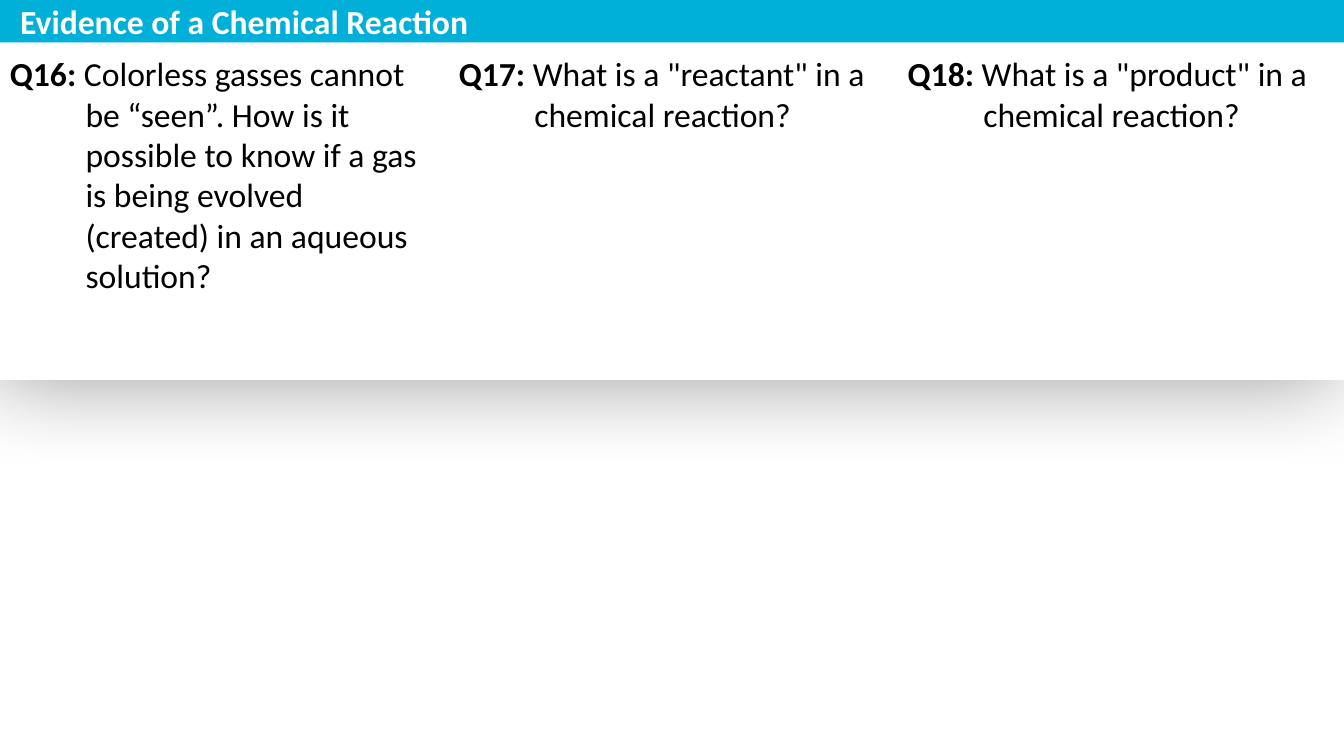
from dataclasses import dataclass

from lxml.etree import SubElement
from pptx import Presentation
from pptx.dml.color import RGBColor
from pptx.enum.shapes import MSO_SHAPE
from pptx.enum.text import MSO_ANCHOR, MSO_AUTO_SIZE, PP_ALIGN
from pptx.oxml.ns import qn
from pptx.util import Inches, Pt

WIDE, HIGH = 13.33, 7.38
PITCH = WIDE * 0.334  # distance between question columns
TOP = HIGH * 0.065    # top of the question row
BAR = 0.42            # height of the title bar


@dataclass(frozen=True)
class Theme:
    font: str = "Calibri"
    size: int = 24
    ink: str = "000000"
    paper: str = "FFFFFF"
    accent: str = "00B0D8"


THEME = Theme()

# Label, question, box width, box height
ASKS = [
    ("Q16: ", "Colorless gasses cannot be “seen”. How is it possible to know "
     "if a gas is being evolved (created) in an aqueous solution?", 4.25, 2.52),
    ("Q17: ", 'What is a "reactant" in a chemical reaction?', 4.47, 0.91),
    ("Q18: ", 'What is a "product" in a chemical reaction?', 4.25, 0.91),
]


def box(*sides):
    return [Inches(side) for side in sides]


def add_run(para, text, color, bold):
    run = para.add_run()
    run.text = text
    font = run.font
    font.name, font.size, font.bold = THEME.font, Pt(THEME.size), bold
    font.color.rgb = RGBColor.from_string(color)


def add_band(slide, top, height, color):
    band = slide.shapes.add_shape(MSO_SHAPE.RECTANGLE,
                                  *box(0, top, WIDE, height))
    band.shadow.inherit = False
    band.fill.solid()
    band.fill.fore_color.rgb = RGBColor.from_string(color)
    band.line.fill.background()
    return band


def add_shade(shape):
    # Soft shadow, thrown slightly to the left
    effects = shape._element.spPr.find(qn("a:effectLst"))
    shade = SubElement(effects, qn("a:outerShdw"), blurRad=str(Pt(68)),
                       dist=str(Pt(5)), dir="10800000", algn="ctr",
                       rotWithShape="0")
    color = SubElement(shade, qn("a:srgbClr"), val=THEME.ink)
    SubElement(color, qn("a:alpha"), val="40000")


def add_ask(slide, left, label, text, width, height):
    frame = slide.shapes.add_textbox(*box(left, TOP, width, height)).text_frame
    frame.word_wrap = True
    frame.auto_size = MSO_AUTO_SIZE.SHAPE_TO_FIT_TEXT
    para = frame.paragraphs[0]
    # Hanging indent
    props = para._p.get_or_add_pPr()
    props.set("marL", str(Inches(0.75)))
    props.set("indent", str(Inches(-0.75)))
    add_run(para, label, THEME.ink, True)
    add_run(para, text, THEME.ink, False)


def set_title(slide, text):
    title = slide.shapes.title
    title.left, title.top, title.width, title.height = box(0, 0, WIDE, BAR)
    frame = title.text_frame
    frame.word_wrap = True
    frame.auto_size = MSO_AUTO_SIZE.NONE
    frame.vertical_anchor = MSO_ANCHOR.MIDDLE
    frame.margin_left = frame.margin_right = Inches(0.2)
    frame.margin_top = frame.margin_bottom = 0
    para = frame.paragraphs[0]
    para.alignment = PP_ALIGN.LEFT
    add_run(para, text, THEME.paper, True)
    # Bring the title in front of its bar
    slide.shapes._spTree.append(title._element)


def main():
    deck = Presentation()
    deck.slide_width, deck.slide_height = box(WIDE, HIGH)
    slide = deck.slides.add_slide(deck.slide_layouts[5])

    # Question panel
    add_shade(add_band(slide, 0.27, 3.5, THEME.paper))
    for col, ask in enumerate(ASKS):
        add_ask(slide, col * PITCH, *ask)

    # Title bar
    add_band(slide, 0, BAR, THEME.accent)
    set_title(slide, "Evidence of a Chemical Reaction")
    deck.save("out.pptx")


if __name__ == "__main__":
    main()
